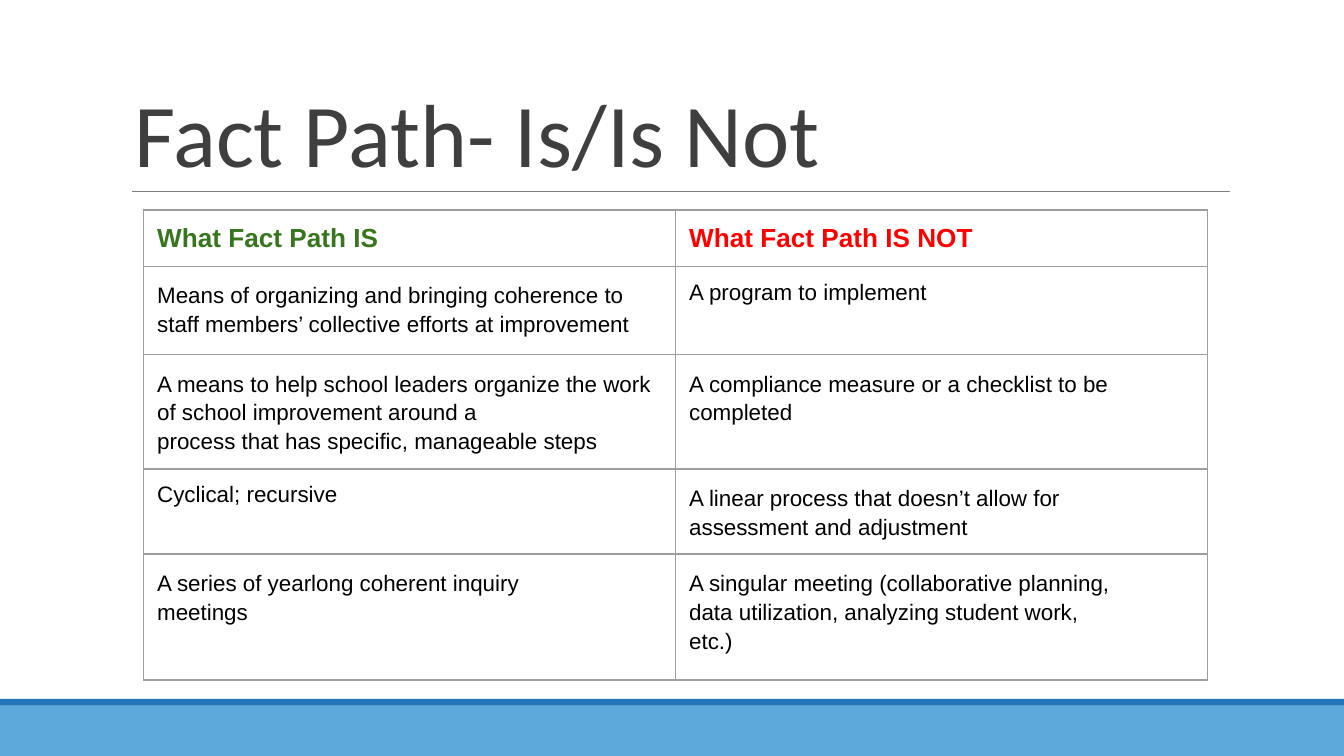
from dataclasses import dataclass

from lxml import etree
from pptx import Presentation
from pptx.dml.color import RGBColor
from pptx.enum import shapes, text
from pptx.oxml import ns
from pptx.util import Pt


@dataclass
class Band:
    top: float
    height: float
    color: str


@dataclass
class CellText:
    lines: list[str]
    spacing: float = 1.15
    size: float = 12
    color: str = "000000"
    bold: bool = False


WIDTH, HEIGHT = 720, 405
BANDS = [Band(378, 27, "5DA9DB"), Band(374.4, 3.6, "2275B9")]
ROW_HEIGHTS = [30.2, 47.2, 61.4, 45.5, 67.5]
COLUMN_WIDTH = 285
ROWS = [
    [CellText(["What Fact Path IS"], 1, 14, "38761D", True),
     CellText(["What Fact Path IS NOT"], 1, 14, "FF0000", True)],
    [CellText(["Means of organizing and bringing coherence to "
               "staff members’ collective efforts at improvement"]),
     CellText(["A program to implement"], 1)],
    [CellText(["A means to help school leaders organize the work "
               "of school improvement around a",
               "process that has specific, manageable steps"]),
     CellText(["A compliance measure or a checklist to be", "completed"])],
    [CellText(["Cyclical; recursive"], 1),
     CellText(["A linear process that doesn’t allow for",
               "assessment and adjustment"])],
    [CellText(["A series of yearlong coherent inquiry", "meetings"]),
     CellText(["A singular meeting (collaborative planning,",
               "data utilization, analyzing student work,", "etc.)"])],
]


def rgb(color: str) -> RGBColor:
    return RGBColor.from_string(color)


def apply(target, values: dict) -> None:
    for name, value in values.items():
        setattr(target, name, value)


def set_font(p, name: str, size: float, color: str, bold: bool = False) -> None:
    apply(p.font, {"name": name, "size": Pt(size), "bold": bold})
    p.font.color.rgb = rgb(color)


def add_band(s, band: Band) -> None:
    sp = s.shapes.add_shape(shapes.MSO_SHAPE.RECTANGLE, 0, Pt(band.top),
                            Pt(WIDTH), Pt(band.height))
    sp.shadow.inherit = False
    sp.fill.solid()
    sp.fill.fore_color.rgb = rgb(band.color)
    sp.line.fill.background()


def add_rule(s, left: float, right: float, y: float) -> None:
    line = s.shapes.add_connector(shapes.MSO_CONNECTOR.STRAIGHT,
                                  Pt(left), Pt(y), Pt(right), Pt(y))
    line.line.color.rgb = rgb("7F7F7F")
    line.line.width = Pt(0.75)
    etree.SubElement(line._element.spPr, ns.qn("a:effectLst"))


def add_borders(cell, color: str, width: float) -> None:
    tc_pr = cell._tc.get_or_add_tcPr()
    for side in ("lnL", "lnR", "lnT", "lnB"):
        ln = etree.SubElement(tc_pr, ns.qn(f"a:{side}"), w=str(Pt(width)))
        fill = etree.SubElement(ln, ns.qn("a:solidFill"))
        etree.SubElement(fill, ns.qn("a:srgbClr"), val=color)


def fill_cell(cell, content: CellText) -> None:
    add_borders(cell, "9E9E9E", 0.75)
    cell.fill.background()
    apply(cell, {f"margin_{side}": Pt(7.2)
                 for side in ("left", "right", "top", "bottom")})
    tf = cell.text_frame
    tf.text = "\n".join(content.lines)
    for p in tf.paragraphs:
        p.line_spacing = content.spacing
        set_font(p, "Arial", content.size, content.color, content.bold)


def add_comparison(s, left: float, top: float) -> None:
    frame = s.shapes.add_table(len(ROWS), 2, Pt(left), Pt(top),
                               Pt(2 * COLUMN_WIDTH), Pt(sum(ROW_HEIGHTS)))
    table = frame.table
    apply(table, {"first_row": False, "horz_banding": False})
    for column in table.columns:
        column.width = Pt(COLUMN_WIDTH)
    for row, height, contents in zip(table.rows, ROW_HEIGHTS, ROWS):
        row.height = Pt(height)
        for cell, content in zip(row.cells, contents):
            fill_cell(cell, content)


def add_title(s, words: str) -> None:
    title = s.shapes.title
    apply(title, {"left": Pt(64.8), "top": Pt(17.3),
                  "width": Pt(594), "height": Pt(85.7)})
    tf = title.text_frame
    apply(tf, {"text": words, "word_wrap": True,
               "auto_size": text.MSO_AUTO_SIZE.NONE,
               "vertical_anchor": text.MSO_ANCHOR.BOTTOM,
               "margin_left": Pt(7.2), "margin_right": Pt(7.2),
               "margin_top": Pt(3.6), "margin_bottom": Pt(3.6)})
    p = tf.paragraphs[0]
    apply(p, {"alignment": text.PP_ALIGN.LEFT, "line_spacing": 0.85})
    set_font(p, "Calibri", 48, "3F3F3F")


def main() -> None:
    prs = Presentation()
    apply(prs, {"slide_width": Pt(WIDTH), "slide_height": Pt(HEIGHT)})
    s = prs.slides.add_slide(prs.slide_layouts[5])

    # Footer bands and the rule under the title
    for band in BANDS:
        add_band(s, band)
    add_rule(s, 70.6, 658.8, 102.6)

    # Title and comparison table
    add_title(s, "Fact Path- Is/Is Not")
    add_comparison(s, 77, 112.5)

    prs.save("out.pptx")


if __name__ == "__main__":
    main()
